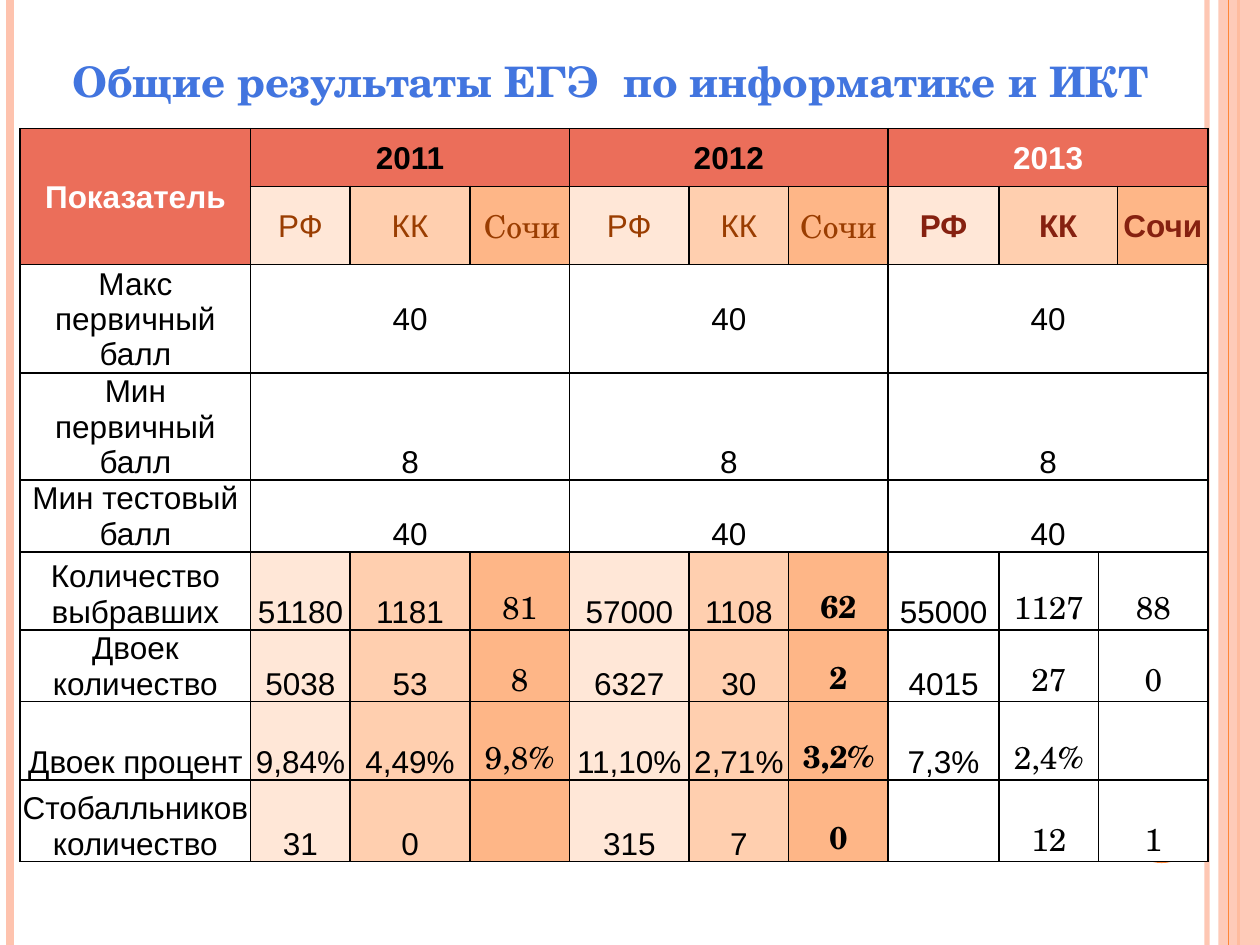
from lxml import etree
from pptx import Presentation
from pptx.dml.color import RGBColor
from pptx.enum import shapes, text
from pptx.oxml import ns
from pptx.util import Inches, Pt

SANS, SERIF = "Arial", "TeX Gyre Schola"
WHITE = RGBColor(0xFF, 0xFF, 0xFF)
BLACK = RGBColor(0, 0, 0)
CORAL = RGBColor(0xEB, 0x6E, 0x5A)
BROWN = RGBColor(0x9A, 0x3D, 0x01)
MAROON = RGBColor(0x86, 0x21, 0x10)
ORANGE = RGBColor(0xFE, 0x86, 0x37)
PINK = RGBColor(0xFE, 0xC3, 0xAE)
BLUE = RGBColor(0x42, 0x75, 0xDF)
REGION_FILLS = [RGBColor(0xFF, 0xE7, 0xD7), RGBColor(0xFF, 0xCF, 0xAF), RGBColor(0xFE, 0xB6, 0x87)]

TITLE = "Общие результаты ЕГЭ  по информатике и ИКТ"
CORNER = "Показатель"
YEARS = [("2011", BLACK, BROWN), ("2012", BLACK, BROWN), ("2013", WHITE, MAROON)]
REGIONS = ["РФ", "КК", "Сочи"]
COMMON_SCORES = [("Макс первичный балл", "40"), ("Мин первичный балл", "8"), ("Мин тестовый балл", "40")]
RESULTS = [
    ("Количество выбравших", "51180", "1181", "81", "57000", "1108", "62", "55000", "1127", "88"),
    ("Двоек количество", "5038", "53", "8", "6327", "30", "2", "4015", "27", "0"),
    ("Двоек процент", "9,84%", "4,49%", "9,8%", "11,10%", "2,71%", "3,2%", "7,3%", "2,4%", ""),
    ("Стобалльников количество", "31", "0", "", "315", "7", "0", "", "12", "1"),
]
COLUMN_WIDTHS = [1.83, 0.79, 0.95, 0.79, 0.95, 0.79, 0.79, 0.88, 0.79, 0.15, 0.72]
ROW_HEIGHTS = [0.46, 0.62, 0.86, 0.85, 0.57, 0.62, 0.57, 0.62, 0.65]
YEAR_SPANS = [(1, 3), (4, 6), (7, 10)]
RULES = [(9.58, PINK, 3, 93), (0.08, PINK, 4.5, 100), (9.83, ORANGE, 1.5, 100)]
INNER_RULE = (9.75, ORANGE, 0.75, 100)


def set_alpha(element, percent):
    color = element.find(".//" + ns.qn("a:srgbClr"))
    etree.SubElement(color, ns.qn("a:alpha"), val=str(percent * 1000))


def add_rule(slide, x, color, width, alpha):
    rule = slide.shapes.add_connector(
        shapes.MSO_CONNECTOR.STRAIGHT, Inches(x), 0, Inches(x), Inches(7.5))
    rule.line.color.rgb = color
    rule.line.width = Pt(width)
    if alpha < 100:
        set_alpha(rule._element.spPr, alpha)
    etree.SubElement(rule._element.spPr, ns.qn("a:effectLst"))


def add_plain(slide, kind, color, *box):
    plain = slide.shapes.add_shape(kind, *map(Inches, box))
    plain.shadow.inherit = False
    plain.fill.solid()
    plain.fill.fore_color.rgb = color
    plain.line.fill.background()
    return plain


def write(paragraph, words, size, font, color, bold):
    run = paragraph.add_run()
    run.text = words
    run.font.size = Pt(size)
    run.font.name = font
    run.font.color.rgb = color
    run.font.bold = bold


def add_borders(cell):
    properties = cell._tc.get_or_add_tcPr()
    for side in ("lnL", "lnR", "lnT", "lnB"):
        border = etree.SubElement(properties, ns.qn("a:" + side), w=str(Pt(1)))
        fill = etree.SubElement(border, ns.qn("a:solidFill"))
        etree.SubElement(fill, ns.qn("a:srgbClr"), val=str(BLACK))


def put(table, row, first, words, last=None, bottom=None, fill=WHITE,
        font=SANS, color=BLACK, bold=False):
    cell = table.cell(row, first)
    end = (bottom or row, last or first)
    if end != (row, first):
        cell.merge(table.cell(*end))
    cell.fill.solid()
    cell.fill.fore_color.rgb = fill
    cell.margin_left = cell.margin_right = cell.margin_top = Inches(0.01)
    cell.margin_bottom = 0
    cell.vertical_anchor = text.MSO_ANCHOR.MIDDLE if row < 3 else text.MSO_ANCHOR.BOTTOM
    paragraph = cell.text_frame.paragraphs[0]
    paragraph.alignment = text.PP_ALIGN.CENTER
    if words:
        write(paragraph, words, 18, font, color, bold)
    return paragraph


def fill_headings(table):
    put(table, 0, 0, CORNER, bottom=1, fill=CORAL, color=WHITE, bold=True)
    for (year, year_color, region_color), (first, last) in zip(YEARS, YEAR_SPANS):
        put(table, 0, first, year, last, fill=CORAL, color=year_color, bold=True)
        latest = year == "2013"
        spans = [(7, 7), (8, 9), (10, 10)] if latest else [(first + i, first + i) for i in range(3)]
        for region, shade, (start, end) in zip(REGIONS, REGION_FILLS, spans):
            font = SERIF if region == "Сочи" and not latest else SANS
            heading = put(table, 1, start, region, end, fill=shade, font=font,
                          color=region_color, bold=latest)
            if start == 3:
                heading.alignment = text.PP_ALIGN.LEFT
                heading._p.get_or_add_pPr().set("indent", str(Inches(0.1)))


def fill_body(table):
    for row, (label, score) in enumerate(COMMON_SCORES, 2):
        put(table, row, 0, label)
        for first, last in YEAR_SPANS:
            put(table, row, first, score, last)
    for row, values in enumerate(RESULTS, 5):
        for column, value in enumerate(values):
            shaded = 1 <= column <= 6
            put(table, row, column, value, last=10 if column == 9 else None,
                fill=REGION_FILLS[(column - 1) % 3] if shaded else WHITE,
                font=SERIF if column in (3, 6, 8, 9) else SANS, bold=column == 6)


def main():
    deck = Presentation()
    deck.slide_width, deck.slide_height = Inches(10), Inches(7.5)
    slide = deck.slides.add_slide(deck.slide_layouts[6])

    for rule in RULES:
        add_rule(slide, *rule)
    band = add_plain(slide, shapes.MSO_SHAPE.RECTANGLE, PINK, 9.67, 0, 0.33, 7.5)
    set_alpha(band._element.spPr, 87)
    add_rule(slide, *INNER_RULE)
    add_plain(slide, shapes.MSO_SHAPE.OVAL, ORANGE, 8.92, 6.25, 0.6, 0.6)

    table = slide.shapes.add_table(
        len(ROW_HEIGHTS), len(COLUMN_WIDTHS), Inches(0.16), Inches(1.02),
        Inches(sum(COLUMN_WIDTHS)), Inches(sum(ROW_HEIGHTS))).table
    table.first_row = table.horz_banding = False
    for column, width in zip(table.columns, COLUMN_WIDTHS):
        column.width = Inches(width)
    for row, height in zip(table.rows, ROW_HEIGHTS):
        row.height = Inches(height)
    for cell in table.iter_cells():
        add_borders(cell)
    fill_headings(table)
    fill_body(table)

    title = slide.shapes.add_textbox(0, Inches(0.39), Inches(9.69), Inches(0.5)).text_frame
    title.word_wrap = True
    title.paragraphs[0].alignment = text.PP_ALIGN.CENTER
    write(title.paragraphs[0], TITLE, 24, SERIF, BLUE, True)

    deck.save("out.pptx")


if __name__ == "__main__":
    main()
